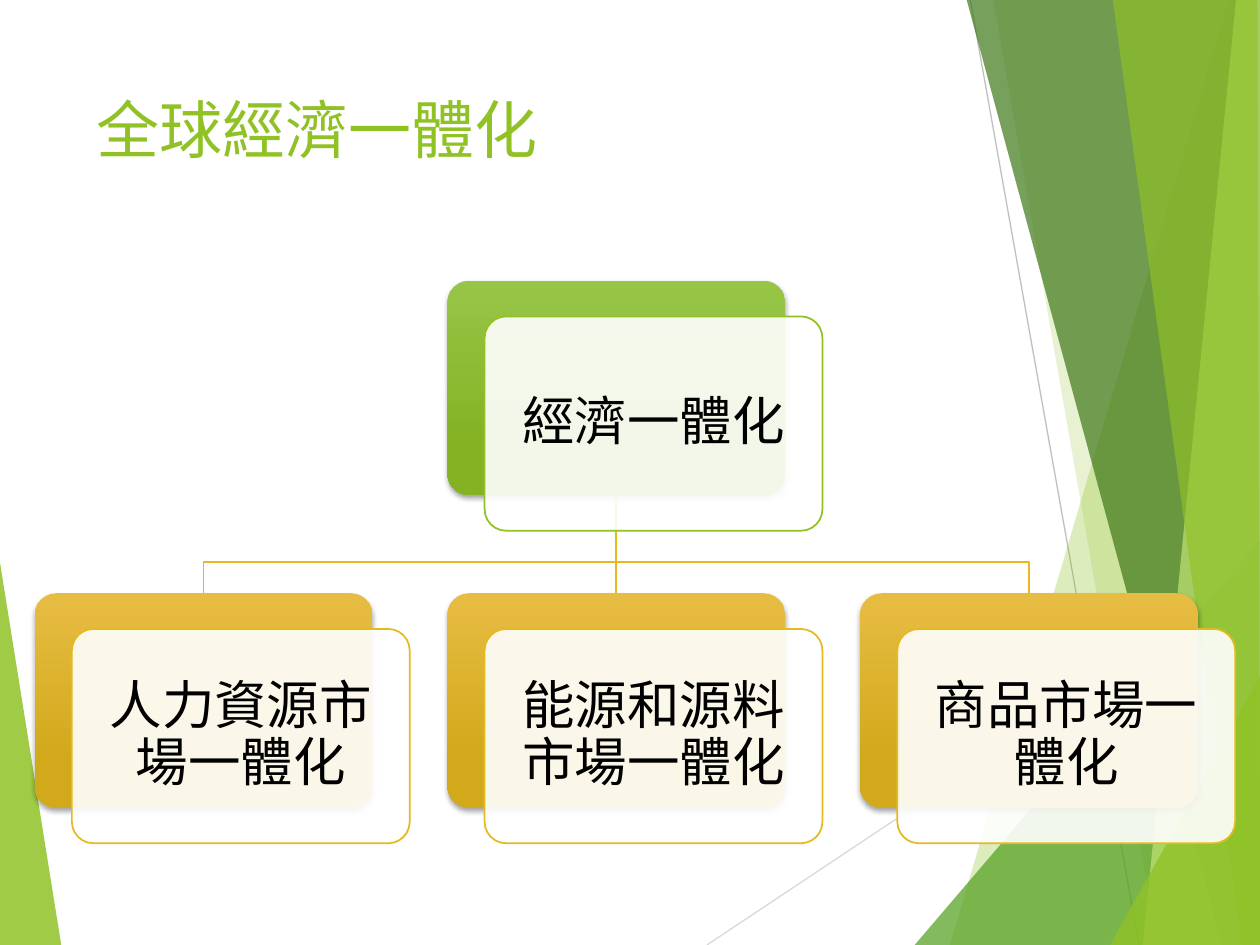
"""Build a hierarchy slide on global economic integration."""
from lxml import etree
from pptx import Presentation
from pptx import util as u
from pptx.dml import color
from pptx.enum import shapes, text
from pptx.oxml import ns

TITLE = "全球經濟一體化"
ROOT = "經濟一體化"
CHILDREN = ["人力資源市場一體化", "能源和源料市場一體化", "商品市場一體化"]
FONT = "Lato"
GREEN, GOLD = "90C226", "E6B91E"
GREEN_STOPS = [(0, "97C547"), (0.78, "84B223")]
GOLD_STOPS = [(0, "E7BC43"), (0.78, "D2A91B")]
W, H = 25.4, 19.05
EDGE = 25.43

LEFT_FACET = (GREEN, 85, [(-0.03, 11.15), (1.24, 19.08), (-0.03, H)])
RAYS = [
    ("D9D9D9", (14.25, H), (EDGE, 11.61)),
    ("BFBFBF", (19.56, 0), (22.96, H)),
]
RIGHT_FACETS = [
    (GREEN, 30, [(24.77, 0), (19.15, H), (25.45, 19.08), (EDGE, 0.03)]),
    (GREEN, 20, [(20.02, -0.03), (23.34, H), (EDGE, H), (EDGE, -0.03)]),
    ("54A021", 72, [(18.44, H), (W, 10.9), (EDGE, H)]),
    ("3F7819", 70, [(19.48, -0.03), (24.64, H), (EDGE, H), (EDGE, -0.03)]),
    ("C0E474", 70, [(24.92, -0.03), (23.04, H), (EDGE, H), (W, -0.03)]),
    (GREEN, 65, [(22.43, -0.03), (25.04, H), (W, H), (25.35, -0.03)]),
    (GREEN, 80, [(22.38, H), (EDGE, 13.59), (EDGE, H)]),
]

BOX_W, BOX_H = 6.81, 4.32
LEFT, STEP = 0.7, 8.32
ROOT_Y, CHILD_Y, BAR_Y = 5.66, 11.96, 11.33
SHIFT_X, SHIFT_Y = 0.75, 0.72


def rgb(value):
    return color.RGBColor.from_string(value)


def solid(s, value, alpha):
    s.fill.solid()
    s.fill.fore_color.rgb = rgb(value)
    clr = s._element.spPr.find(".//" + ns.qn("a:srgbClr"))
    etree.SubElement(clr, ns.qn("a:alpha"), val=str(alpha * 1000))


def outline(s, value, width=1):
    s.line.color.rgb = rgb(value)
    s.line.width = u.Pt(width)


def path(sp, points, close):
    pts = [(u.Cm(x), u.Cm(y)) for x, y in points]
    builder = sp.build_freeform(*pts[0])
    builder.add_line_segments(pts[1:], close=close)
    s = builder.convert_to_shape()
    s.shadow.inherit = False
    return s


def facet(sp, value, alpha, points):
    s = path(sp, points, True)
    solid(s, value, alpha)
    s.line.fill.background()


def line(sp, value, start, end, width):
    s = sp.add_connector(shapes.MSO_CONNECTOR.STRAIGHT,
                         *(u.Cm(v) for v in start + end))
    outline(s, value, width)
    etree.SubElement(s._element.spPr, ns.qn("a:effectLst"))
    return s


def rounded(sp, x, y):
    s = sp.add_shape(shapes.MSO_SHAPE.ROUNDED_RECTANGLE,
                     u.Cm(x), u.Cm(y), u.Cm(BOX_W), u.Cm(BOX_H))
    s.adjustments[0] = 0.1
    s.shadow.inherit = False
    return s


def back_card(sp, x, y, stops):
    s = rounded(sp, x, y)
    s.fill.gradient()
    s.fill.gradient_angle = 270
    for stop, (position, value) in zip(s.fill.gradient_stops, stops):
        stop.position = position
        stop.color.rgb = rgb(value)
    s.line.fill.background()
    effects = s._element.spPr.find(ns.qn("a:effectLst"))
    shadow = etree.SubElement(effects, ns.qn("a:outerShdw"), blurRad=str(u.Pt(3)),
                              dist=str(u.Pt(2)), dir="5400000", rotWithShape="0")
    clr = etree.SubElement(shadow, ns.qn("a:srgbClr"), val="000000")
    etree.SubElement(clr, ns.qn("a:alpha"), val="35000")
    return s


def write(tf, words, size, value):
    tf.word_wrap = True
    p = tf.paragraphs[0]
    r = p.add_run()
    r.text = words
    r.font.name = FONT
    r.font.size = u.Pt(size)
    r.font.color.rgb = rgb(value)
    return p


def front_card(sp, x, y, words, value):
    s = rounded(sp, x + SHIFT_X, y + SHIFT_Y)
    solid(s, "FFFFFF", 90)
    outline(s, value)
    tf = s.text_frame
    tf.vertical_anchor = text.MSO_ANCHOR.MIDDLE
    tf.margin_left = tf.margin_right = u.Cm(0.3)
    tf.margin_top = tf.margin_bottom = u.Cm(0.3)
    p = write(tf, words, 30, "000000")
    p.alignment = text.PP_ALIGN.CENTER
    p.line_spacing = 0.9


def main():
    prs = Presentation()
    prs.slide_width, prs.slide_height = u.Cm(W), u.Cm(H)
    sp = prs.slides.add_slide(prs.slide_layouts[6]).shapes

    facet(sp, *LEFT_FACET)
    for value, start, end in RAYS:
        line(sp, value, start, end, 0.75)
    for item in RIGHT_FACETS:
        facet(sp, *item)

    title = sp.add_textbox(u.Cm(1.7), u.Cm(1.7), u.Cm(17.63), u.Cm(3.66))
    write(title.text_frame, TITLE, 36, GREEN)

    columns = [LEFT + i * STEP for i in range(len(CHILDREN))]
    root_x = columns[1]
    root = back_card(sp, root_x, ROOT_Y, GREEN_STOPS)
    backs = [back_card(sp, x, CHILD_Y, GOLD_STOPS) for x in columns]

    mid, bottom = root_x + BOX_W / 2, ROOT_Y + BOX_H
    for x, back in zip(columns, backs):
        end = x + BOX_W / 2
        if x == root_x:
            s = line(sp, GOLD, (mid, bottom), (end, CHILD_Y), 1)
            s.begin_connect(root, 2)
            s.end_connect(back, 0)
        else:
            s = path(sp, [(mid, bottom), (mid, BAR_Y), (end, BAR_Y), (end, CHILD_Y)], False)
            s.fill.background()
            outline(s, GOLD)

    front_card(sp, root_x, ROOT_Y, ROOT, GREEN)
    for x, words in zip(columns, CHILDREN):
        front_card(sp, x, CHILD_Y, words, GOLD)

    prs.save("out.pptx")


if __name__ == "__main__":
    main()
